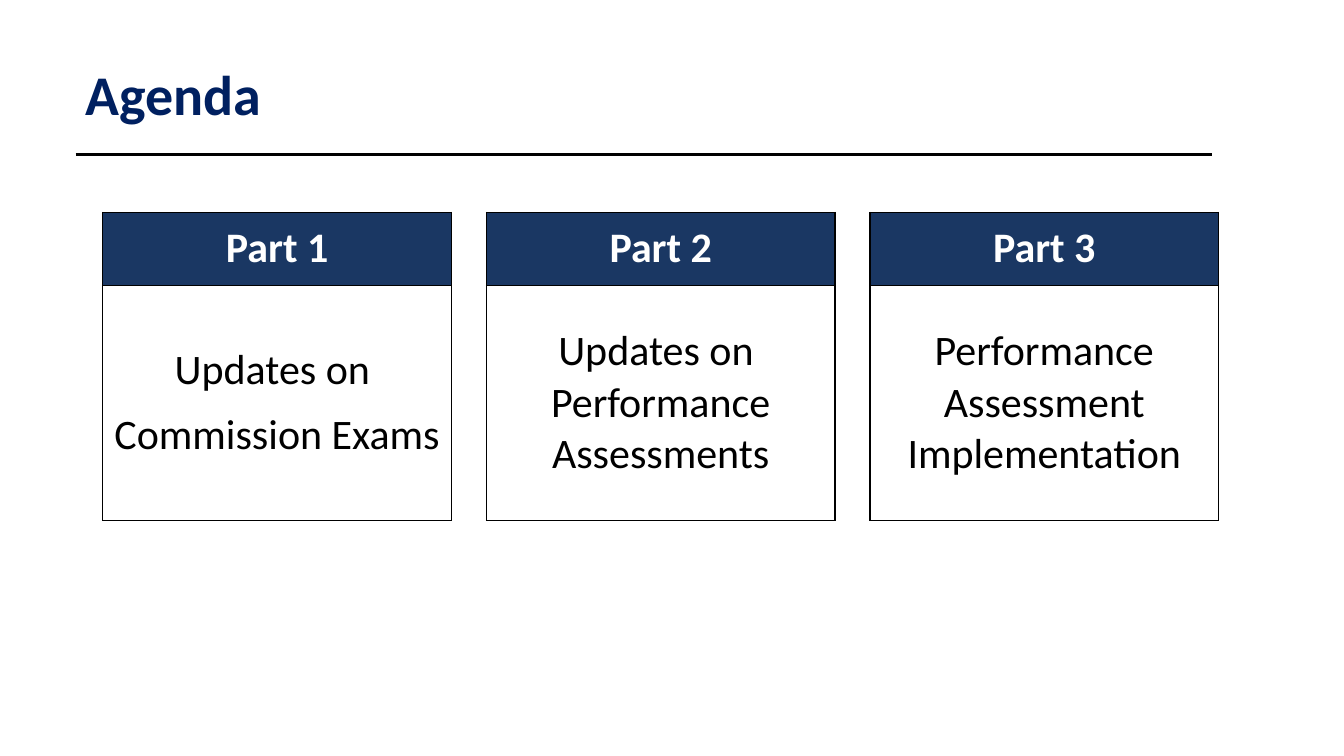
from lxml.etree import SubElement
from pptx import Presentation
from pptx.dml.color import RGBColor
from pptx.enum.shapes import MSO_CONNECTOR
from pptx.enum.text import MSO_ANCHOR, PP_ALIGN
from pptx.oxml.ns import qn
from pptx.util import Pt

NAVY = RGBColor(0x00, 0x20, 0x60)
HEADER = RGBColor(0x1A, 0x37, 0x63)
BLACK = RGBColor(0x00, 0x00, 0x00)
WHITE = RGBColor(0xFF, 0xFF, 0xFF)

# Heading, body paragraphs, space after each paragraph
PARTS = [
    ("Part 1", ["Updates on ", "Commission Exams"], 10),
    ("Part 2", ["Updates on ", "Performance Assessments"], 0),
    ("Part 3", ["Performance Assessment", "Implementation"], 0),
]


def set_attrs(obj, values):
    for name, value in values.items():
        setattr(obj, name, value)


def write_text(tf, lines, font, para):
    for i, line in enumerate(lines):
        p = tf.paragraphs[0] if i == 0 else tf.add_paragraph()
        set_attrs(p, para)
        r = p.add_run()
        r.text = line
        color = font["color"]
        set_attrs(r.font, {"name": "Calibri", "size": Pt(font["size"]), "bold": font["bold"]})
        r.font.color.rgb = color


def add_borders(cell):
    # Borders must come before the fill in the cell properties
    tc_pr = cell._tc.get_or_add_tcPr()
    for i, side in enumerate(("lnL", "lnR", "lnT", "lnB")):
        ln = SubElement(tc_pr, qn("a:" + side), w=str(Pt(1)))
        tc_pr.insert(i, ln)
        fill = SubElement(ln, qn("a:solidFill"))
        SubElement(fill, qn("a:srgbClr"), val=str(BLACK))


def add_title(s, x, y, w, h):
    # Title text
    tf = s.shapes.add_textbox(Pt(x), Pt(y), Pt(w), Pt(h)).text_frame
    set_attrs(tf, {"word_wrap": True, "vertical_anchor": MSO_ANCHOR.BOTTOM})
    write_text(tf, ["Agenda"], {"size": 40, "bold": True, "color": NAVY},
               {"line_spacing": 0.85})

    # Rule below the title
    rule_y = Pt(y + h + 16)
    rule = s.shapes.add_connector(MSO_CONNECTOR.STRAIGHT, Pt(x), rule_y, Pt(x + w + 20), rule_y)
    rule.line.color.rgb = BLACK
    rule.line.width = Pt(2.25)
    SubElement(rule._element.spPr, qn("a:effectLst"))


def add_part(s, x, y, w, h, heading, lines, space_after):
    header_h = 52
    table = s.shapes.add_table(2, 1, Pt(x), Pt(y), Pt(w), Pt(h)).table
    set_attrs(table, {"first_row": False, "horz_banding": False})
    table.columns[0].width = Pt(w)
    rows = [
        (header_h, [heading], HEADER, WHITE, True, MSO_ANCHOR.TOP, 0),
        (h - header_h, lines, WHITE, BLACK, False, MSO_ANCHOR.MIDDLE, space_after),
    ]
    for i, (row_h, texts, fill, color, bold, anchor, after) in enumerate(rows):
        table.rows[i].height = Pt(row_h)
        cell = table.cell(i, 0)
        cell.fill.solid()
        cell.fill.fore_color.rgb = fill
        margins = ("margin_left", "margin_right", "margin_top", "margin_bottom")
        set_attrs(cell, {"vertical_anchor": anchor, **dict.fromkeys(margins, Pt(7.2))})
        add_borders(cell)
        write_text(cell.text_frame, texts, {"size": 30, "bold": bold, "color": color},
                   {"alignment": PP_ALIGN.CENTER, "space_after": Pt(after)})


def add_parts(s, x, y, w, h):
    part_w = 249
    step = (w - part_w) / (len(PARTS) - 1)
    for i, part in enumerate(PARTS):
        add_part(s, x + i * step, y, part_w, h, *part)


def main():
    prs = Presentation()
    set_attrs(prs, {"slide_width": Pt(960), "slide_height": Pt(540)})
    s = prs.slides.add_slide(prs.slide_layouts[6])
    add_title(s, 54, 41, 792, 53.3)
    add_parts(s, 73.5, 151.8, 797, 220)
    prs.save("out.pptx")


if __name__ == "__main__":
    main()
